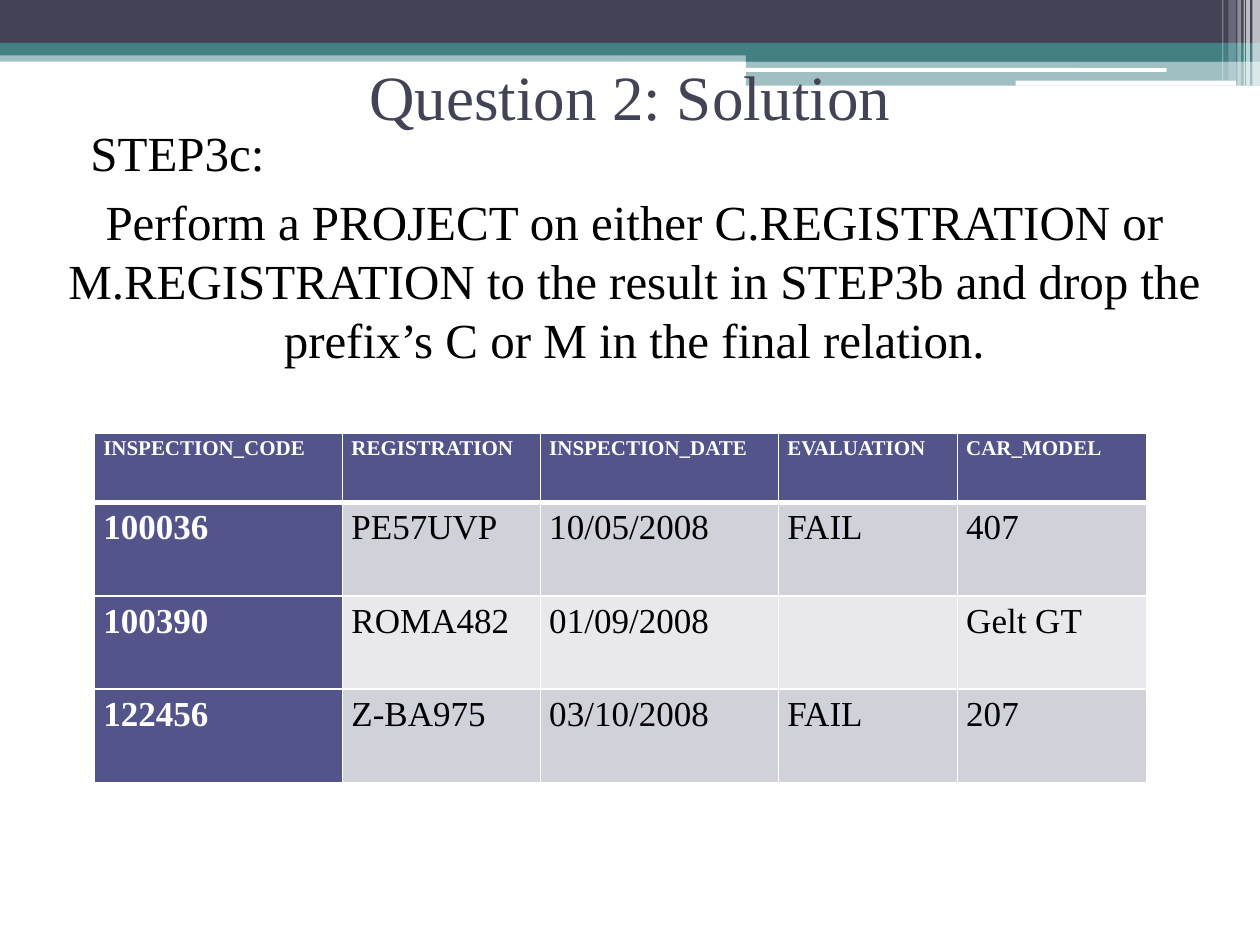
from lxml.etree import SubElement
from pptx import Presentation
from pptx.dml.color import RGBColor
from pptx.enum.shapes import MSO_SHAPE
from pptx.enum.text import MSO_ANCHOR, PP_ALIGN
from pptx.oxml.ns import qn
from pptx.util import Emu, Inches, Pt

COLORS = {
    "slate": "424456", "teal": "438086", "white": "FFFFFF", "black": "000000",
    "indigo": "53548A", "band": "D1D1DA", "pale": "E9E9ED",
}
FONT = "Times New Roman"
WIDTH, HEIGHT = Inches(10), Inches(7.5)
GRID_COLUMNS, GRID_ROWS = 1000, 750

HEADER_BARS = [
    (0, 40, 1000, 9, "teal", 50),
    (0, 0, 1000, 34, "slate", 100),
    (0, 34, 1000, 10, "teal", 100),
    (592, 39, 408, 10, "teal", 100),
    (592, 48, 408, 20, "teal", 50),
]
HEADER_LINES = [(591, 54, 335, 3), (806, 64, 175, 4)]
CORNER_STRIPES = [
    (994, 6, 68, 65), (989, 3, 68, 65), (987, 1, 68, 60),
    (982, 3, 68, 40), (975, 6, 64, 20), (970, 1, 64, 30),
]
COLUMN_WIDTHS = [197, 157, 189, 142, 150]
ROW_HEIGHTS = [55, 74, 74, 74]
INSPECTIONS = [
    ["INSPECTION_CODE", "REGISTRATION", "INSPECTION_DATE", "EVALUATION", "CAR_MODEL"],
    ["100036", "PE57UVP", "10/05/2008", "FAIL", "407"],
    ["100390", "ROMA482", "01/09/2008", "", "Gelt GT"],
    ["122456", "Z-BA975", "03/10/2008", "FAIL", "207"],
]


def across(columns):
    return Emu(int(WIDTH * columns / GRID_COLUMNS))


def down(rows):
    return Emu(int(HEIGHT * rows / GRID_ROWS))


def area(left, top, width, height):
    return across(left), down(top), across(width), down(height)


def color(name):
    return RGBColor.from_string(COLORS[name])


def add_bar(page, left, top, width, height, fill, opacity=100, kind=MSO_SHAPE.RECTANGLE):
    bar = page.shapes.add_shape(kind, *area(left, top, width, height))
    bar.shadow.inherit = False
    bar.fill.solid()
    bar.fill.fore_color.rgb = color(fill)
    bar.line.fill.background()
    if opacity < 100:
        tint = bar.fill._xPr.find(".//" + qn("a:srgbClr"))
        SubElement(tint, qn("a:alpha"), val=str(opacity * 1000))


def format_runs(para, size, ink, bold=False):
    for span in para.runs:
        span.font.name = FONT
        span.font.size = Pt(size)
        span.font.bold = bold
        span.font.color.rgb = color(ink)


def add_text(page, place, text, size, ink, align, anchor=MSO_ANCHOR.TOP):
    box = page.shapes.add_textbox(*area(*place))
    frame = box.text_frame
    frame.word_wrap = True
    frame.vertical_anchor = anchor
    frame.text = text
    para = frame.paragraphs[0]
    para.alignment = align
    format_runs(para, size, ink)
    return para


def add_border(cell, side, points):
    line = SubElement(cell._tc.get_or_add_tcPr(), qn("a:ln" + side), w=str(Pt(points)))
    fill = SubElement(line, qn("a:solidFill"))
    SubElement(fill, qn("a:srgbClr"), val=COLORS["white"])


def fill_cell(cell, text, row, column):
    header = row == 0
    strong = header or column == 0
    borders = {"L": 1, "R": 1, "T": 3 if row == 1 else 1, "B": 3 if header else 1}
    for side, points in borders.items():
        add_border(cell, side, points)
    cell.fill.solid()
    cell.fill.fore_color.rgb = color("indigo" if strong else "band" if row % 2 else "pale")
    cell.margin_left = cell.margin_right = across(7)
    cell.margin_top = cell.margin_bottom = 0
    cell.text = text
    para = cell.text_frame.paragraphs[0]
    para.line_spacing = 1.15
    para.space_after = Pt(10)
    format_runs(para, 12 if header else 20, "white" if strong else "black", strong)


def add_inspections(page, left, top):
    place = area(left, top, sum(COLUMN_WIDTHS), sum(ROW_HEIGHTS))
    table = page.shapes.add_table(len(ROW_HEIGHTS), len(COLUMN_WIDTHS), *place).table
    for column, width in zip(table.columns, COLUMN_WIDTHS):
        column.width = across(width)
    for row, height in zip(table.rows, ROW_HEIGHTS):
        row.height = down(height)
    for row, values in enumerate(INSPECTIONS):
        for column, value in enumerate(values):
            fill_cell(table.cell(row, column), value, row, column)


def add_header(page):
    for bar in HEADER_BARS:
        add_bar(page, *bar)
    for line in HEADER_LINES:
        add_bar(page, *line, "white", kind=MSO_SHAPE.ROUNDED_RECTANGLE)
    for left, width, height, opacity in CORNER_STRIPES:
        add_bar(page, left, 0, width, height, "white", opacity)


def main():
    deck = Presentation()
    deck.slide_width, deck.slide_height = WIDTH, HEIGHT
    page = deck.slides.add_slide(deck.slide_layouts[6])
    add_header(page)
    add_text(page, (50, 44, 900, 63), "Question 2: Solution", 36, "slate",
             PP_ALIGN.CENTER, MSO_ANCHOR.MIDDLE)
    step = add_text(page, (50, 92, 900, 627), "STEP3c:", 28, "black", PP_ALIGN.JUSTIFY)
    step.space_before = Pt(3)
    step._p.get_or_add_pPr().set("marL", str(across(12)))
    add_text(page, (43, 147, 921, 151),
             "Perform a PROJECT on either C.REGISTRATION or M.REGISTRATION to the result "
             "in STEP3b and drop the prefix’s C or M in the final relation.",
             28, "black", PP_ALIGN.CENTER)
    add_inspections(page, 75, 344)
    deck.save("out.pptx")


if __name__ == "__main__":
    main()
